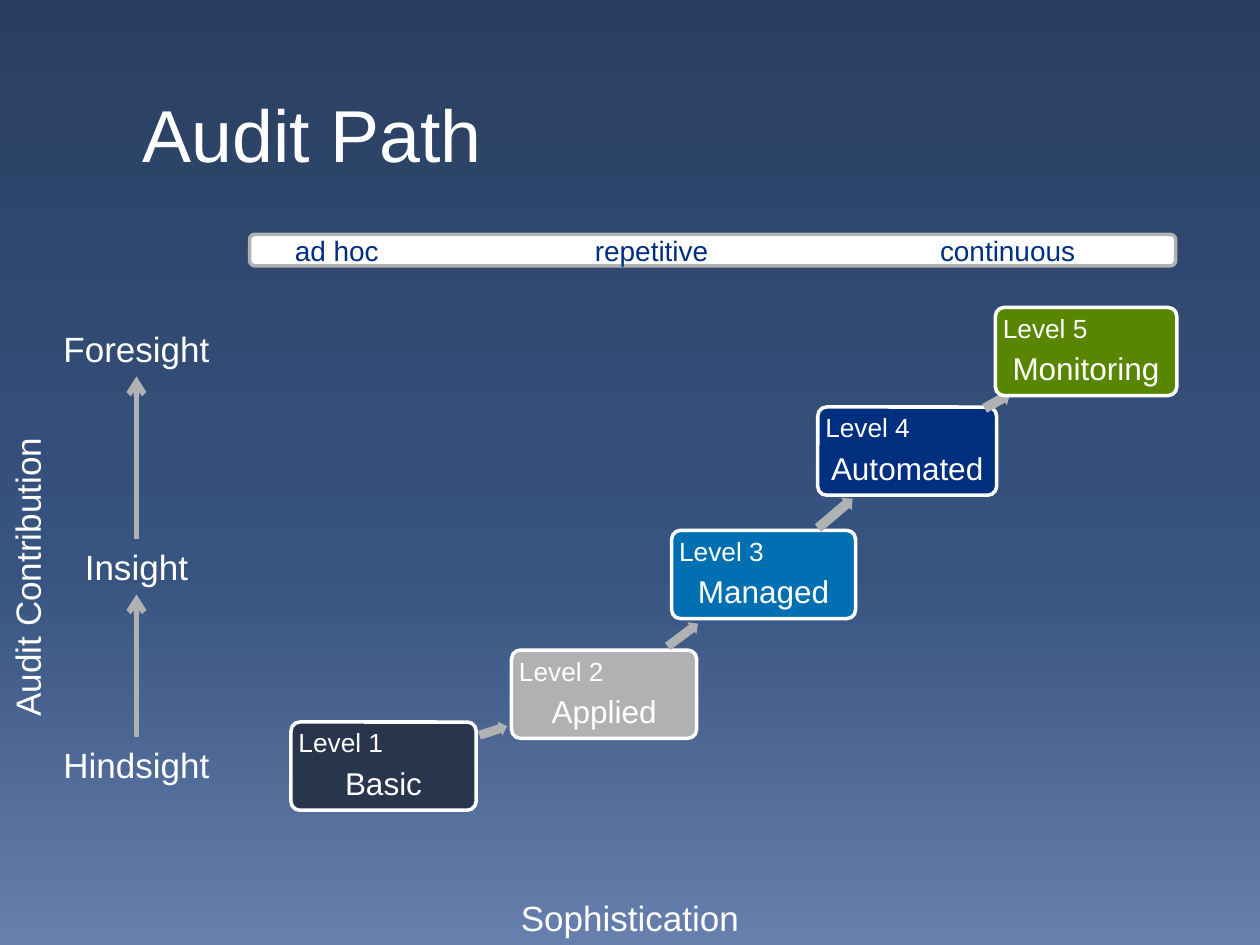
from copy import deepcopy

from lxml.etree import SubElement
from pptx import Presentation
from pptx.dml.color import RGBColor
from pptx.enum.shapes import MSO_CONNECTOR, MSO_SHAPE
from pptx.enum.text import MSO_ANCHOR, PP_ALIGN
from pptx.oxml.ns import qn
from pptx.util import Pt

WHITE = RGBColor(0xFF, 0xFF, 0xFF)
GRAY = RGBColor(0xB0, 0xB1, 0xB3)
NAVY = RGBColor(0x00, 0x2F, 0x80)
SLATE = RGBColor(0x28, 0x35, 0x4C)
BLUE = RGBColor(0x00, 0x70, 0xB2)
GREEN = RGBColor(0x59, 0x86, 0x00)
SKY = (
    (0, RGBColor(0x29, 0x3F, 0x60)),
    (0.6, RGBColor(0x37, 0x53, 0x80)),
    (1, RGBColor(0x66, 0x7F, 0xAC)),
)

LABEL_HEIGHT = 31.5
LEVEL_HEIGHT = 50.4
CONTRIBUTION_LEFT, CONTRIBUTION_WIDTH = 28, 100
CONTRIBUTIONS = (("Hindsight", 421.2), ("Insight", 308.2), ("Foresight", 183.6))
# Name, fill, left, top, width
LEVELS = (
    ("Basic", SLATE, 166.3, 412.6, 105.8),
    ("Applied", GRAY, 292.3, 371.5, 105.8),
    ("Managed", BLUE, 383.8, 303.1, 105.1),
    ("Automated", NAVY, 467.3, 232.6, 102.2),
    ("Monitoring", GREEN, 568.8, 175.7, 103.7),
)
# Left, top, width, height, rotation of the arrow leaving each level
CLIMBS = (
    (273.6, 413.3, 16.6, 8.6, 341.9),
    (379.4, 358.6, 21.6, 8.6, 323),
    (464.4, 288.7, 25.9, 9.4, 319.6),
    (561.6, 224.6, 16.6, 9.4, 330.7),
)
PHASES = (("ad hoc", 25), ("repetitive", 196.5), ("continuous", 393.7))


class AuditSlide:
    def __init__(self, slide, font_name="Arial"):
        self.slide = slide
        self.font_name = font_name

    def style(self, paragraph, size, color=WHITE, align=PP_ALIGN.LEFT):
        paragraph.alignment = align
        for run in paragraph.runs:
            run.font.name = self.font_name
            run.font.size = Pt(size)
            run.font.color.rgb = color

    def background(self, colors):
        fill = self.slide.background.fill
        fill.gradient()
        fill.gradient_angle = 270
        stop_list = self.slide.element.find(".//" + qn("a:gsLst"))
        stop_list.insert(1, deepcopy(stop_list[0]))
        for stop, (position, color) in zip(fill.gradient_stops, colors):
            stop.position = position
            stop.color.rgb = color

    def title(self, text, left, top, width, height):
        title = self.slide.shapes.title
        title.left, title.top = Pt(left), Pt(top)
        title.width, title.height = Pt(width), Pt(height)
        frame = title.text_frame
        frame.text = text
        frame.margin_left = Pt(45.4)
        frame.vertical_anchor = MSO_ANCHOR.MIDDLE
        self.style(frame.paragraphs[0], 42)

    def label(self, text, left, top, width, rotation=0):
        label = self.slide.shapes.add_textbox(
            Pt(left), Pt(top), Pt(width), Pt(LABEL_HEIGHT))
        label.rotation = rotation
        label.text_frame.word_wrap = False
        label.text_frame.text = text
        self.style(label.text_frame.paragraphs[0], 20, align=PP_ALIGN.CENTER)
        return label

    def shape(self, kind, left, top, width, height, fill, outline=None):
        shape = self.slide.shapes.add_shape(
            kind, Pt(left), Pt(top), Pt(width), Pt(height))
        shape.shadow.inherit = False
        shape.fill.solid()
        shape.fill.fore_color.rgb = fill
        if outline is None:
            shape.line.fill.background()
        else:
            shape.line.color.rgb = outline
            shape.line.width = Pt(2)
        return shape

    def phase_bar(self, phases, left, top, width, height):
        bar = self.shape(MSO_SHAPE.ROUNDED_RECTANGLE, left, top, width, height,
                         WHITE, GRAY)
        frame = bar.text_frame
        frame.margin_left = frame.margin_right = 0
        frame.vertical_anchor = MSO_ANCHOR.MIDDLE
        paragraph = frame.paragraphs[0]
        paragraph.text = "".join("\t" + name for name, _ in phases)
        tabs = SubElement(paragraph._p.get_or_add_pPr(), qn("a:tabLst"))
        for _, position in phases:
            SubElement(tabs, qn("a:tab"), pos=str(Pt(position)), algn="l")
        self.style(paragraph, 16, NAVY)

    def level(self, number, name, fill, left, top, width):
        box = self.shape(MSO_SHAPE.ROUNDED_RECTANGLE, left, top, width,
                         LEVEL_HEIGHT, fill, WHITE)
        box.adjustments[0] = 0.1
        frame = box.text_frame
        frame.word_wrap = True
        frame.margin_left = frame.margin_right = Pt(2.8)
        frame.margin_top = frame.margin_bottom = Pt(2.8)
        frame.vertical_anchor = MSO_ANCHOR.MIDDLE
        frame.text = f"Level {number}\n{name}"
        heading, caption = frame.paragraphs
        heading.line_spacing = caption.line_spacing = 0.9
        heading.space_after = Pt(5.25)
        self.style(heading, 15)
        self.style(caption, 18, align=PP_ALIGN.CENTER)

    def climb(self, left, top, width, height, rotation):
        arrow = self.shape(MSO_SHAPE.RIGHT_ARROW, left, top, width, height, GRAY)
        arrow.adjustments[0] = 0.6
        arrow.adjustments[1] = 0.5
        arrow.rotation = rotation

    def rise(self, lower, upper):
        """Draw an arrow from the top of one label to the bottom of the next."""
        arrow = self.slide.shapes.add_connector(MSO_CONNECTOR.STRAIGHT, 0, 0, 0, 0)
        arrow.begin_connect(lower, 0)
        arrow.end_connect(upper, 2)
        arrow.line.color.rgb = GRAY
        arrow.line.width = Pt(3.25)
        properties = arrow._element.spPr
        SubElement(properties.find(qn("a:ln")), qn("a:tailEnd"), type="arrow")
        SubElement(properties, qn("a:effectLst"))


def main():
    presentation = Presentation()
    presentation.slide_width, presentation.slide_height = Pt(720), Pt(540)
    title_only = presentation.slide_layouts[5]
    audit = AuditSlide(presentation.slides.add_slide(title_only))

    audit.background(SKY)
    audit.title("Audit Path", 36, 21, 648, 110)
    audit.phase_bar(PHASES, 142.6, 133.9, 529.2, 18)

    contributions = [
        audit.label(name, CONTRIBUTION_LEFT, top, CONTRIBUTION_WIDTH)
        for name, top in CONTRIBUTIONS
    ]
    for lower, upper in zip(contributions, contributions[1:]):
        audit.rise(lower, upper)
    audit.label("Sophistication", 290, 508.5, 140)
    audit.label("Audit Contribution", -72, 314, 175, rotation=270)

    for number, level in enumerate(LEVELS, start=1):
        audit.level(number, *level)
        if number <= len(CLIMBS):
            audit.climb(*CLIMBS[number - 1])

    presentation.save("out.pptx")


if __name__ == "__main__":
    main()
